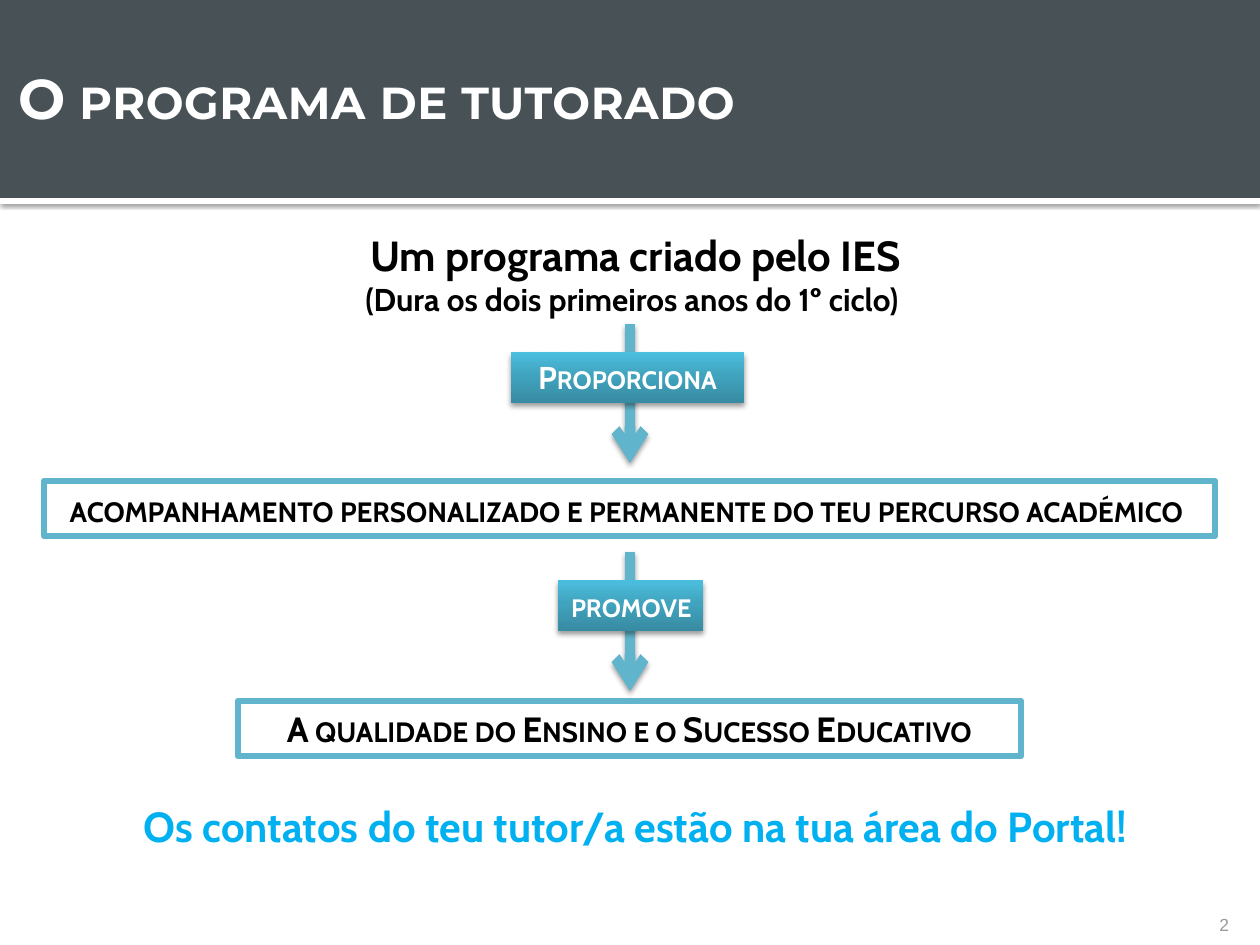
from lxml import etree
from pptx import Presentation
from pptx.dml.color import RGBColor
from pptx.enum.shapes import MSO_CONNECTOR, MSO_SHAPE
from pptx.enum.text import MSO_ANCHOR, PP_ALIGN
from pptx.oxml.ns import qn
from pptx.util import Emu, Pt

RECTANGLE = MSO_SHAPE.RECTANGLE
STRAIGHT = MSO_CONNECTOR.STRAIGHT
TOP, MIDDLE, BOTTOM = MSO_ANCHOR.TOP, MSO_ANCHOR.MIDDLE, MSO_ANCHOR.BOTTOM
LEFT, CENTER, RIGHT = PP_ALIGN.LEFT, PP_ALIGN.CENTER, PP_ALIGN.RIGHT

EMU_PER_PX = 914400 / 126
WIDTH, HEIGHT = 1260, 945

WHITE, BLACK = "FFFFFF", "000000"
SLATE, TEAL, SKY, GRAY = "485156", "60B5CC", "00B0F0", "9B9A98"
LABEL_GRADIENT = [(0, "378BA2"), (55, "41A4BF"), (100, "4BBFDE")]

# opacity in percent, blur and distance in points
BAND_SHADOW = (60, 2.5, 0.8)
SOFT_SHADOW = (38, 3.1, 2)

BODY_INSETS = (13, 6, 13, 6)
TITLE_INSETS = (13, 6, 6, 6)
NO_INSETS = (0, 0, 0, 0)


def px(length):
    return Emu(round(length * EMU_PER_PX))


def color(value):
    return RGBColor.from_string(value)


def add_element(parent, tag, **attributes):
    element = etree.SubElement(parent, qn(tag))
    for name, value in attributes.items():
        element.set(name, str(value))
    return element


def add_color(parent, value):
    return add_element(parent, "a:srgbClr", val=value)


class SlideBuilder:
    def __init__(self, slide, font="Cabin"):
        self.slide = slide
        self.font = font

    def set_shadow(self, properties, shadow):
        """Give the shape properties an effect list, empty without a shadow."""
        effects = properties.find(qn("a:effectLst"))
        if effects is None:
            effects = add_element(properties, "a:effectLst")
        if shadow:
            opacity, blur, distance = shadow
            outer = add_element(effects, "a:outerShdw", blurRad=Pt(blur),
                                dist=Pt(distance), dir=90 * 60000, rotWithShape=0)
            add_element(add_color(outer, BLACK), "a:alpha", val=opacity * 1000)

    def set_gradient(self, shape, stops):
        """Fill the shape with colour stops that run from bottom to top."""
        shape.fill.gradient()
        shape.fill.gradient_angle = 90
        stop_list = next(shape._element.spPr.iter(qn("a:gsLst")))
        for stop in list(stop_list):
            stop_list.remove(stop)
        for position, value in stops:
            add_color(add_element(stop_list, "a:gs", pos=position * 1000), value)

    def fill_text(self, shape, lines, text_color=BLACK, font=None, bold=True,
                  small_caps=False, spacing=None, align=CENTER, anchor=TOP,
                  insets=BODY_INSETS, wrap=True):
        """Put (text, size) lines into the shape, one paragraph each."""
        frame = shape.text_frame
        sides = ("margin_left", "margin_top", "margin_right", "margin_bottom")
        settings = {"word_wrap": wrap, "vertical_anchor": anchor}
        settings.update(zip(sides, map(px, insets)))
        for name, value in settings.items():
            setattr(frame, name, value)
        for index, (text, size) in enumerate(lines):
            paragraph = frame.add_paragraph() if index else frame.paragraphs[0]
            paragraph.alignment = align
            run = paragraph.add_run()
            run.text = text
            style = {"name": font or self.font, "size": Pt(size), "bold": bold}
            for name, value in style.items():
                setattr(run.font, name, value)
            run.font.color.rgb = color(text_color)
            run_properties = run._r.get_or_add_rPr()
            if small_caps:
                run_properties.set("cap", "small")
            if spacing:
                run_properties.set("spc", str(spacing))

    def text(self, box, lines, **style):
        shape = self.slide.shapes.add_textbox(*map(px, box))
        self.fill_text(shape, lines, **style)

    def rectangle(self, box, fill=WHITE, line=None, shadow=None):
        """Draw a rectangle; a list of stops as fill makes a gradient."""
        shape = self.slide.shapes.add_shape(RECTANGLE, *map(px, box))
        if isinstance(fill, list):
            self.set_gradient(shape, fill)
        else:
            shape.fill.solid()
            shape.fill.fore_color.rgb = color(fill)
        if line:
            shape.line.color.rgb = color(line)
            shape.line.width = Pt(3.78)
        else:
            shape.line.fill.background()
        shape.shadow.inherit = False
        self.set_shadow(shape._element.spPr, shadow)
        return shape

    def statement(self, box, text):
        shape = self.rectangle(box, line=TEAL)
        self.fill_text(shape, [(text, 20)], small_caps=True)

    def label(self, box, text, **style):
        shape = self.rectangle(box, fill=LABEL_GRADIENT, shadow=SOFT_SHADOW)
        self.fill_text(shape, [(text, 18)], text_color=WHITE, small_caps=True,
                       **style)

    def down_arrow(self, x, top, length):
        connector = self.slide.shapes.add_connector(
            STRAIGHT, *map(px, (x, top, x, top + length)))
        connector.line.color.rgb = color(TEAL)
        connector.line.width = Pt(6)
        add_element(connector.line._get_or_add_ln(), "a:tailEnd", type="arrow")
        self.set_shadow(connector._element.spPr, SOFT_SHADOW)


def main():
    presentation = Presentation()
    presentation.slide_width = px(WIDTH)
    presentation.slide_height = px(HEIGHT)
    builder = SlideBuilder(
        presentation.slides.add_slide(presentation.slide_layouts[6]))

    builder.rectangle((0, 198, WIDTH, 6), shadow=BAND_SHADOW)
    builder.rectangle((0, 0, WIDTH, 198), fill=SLATE)
    builder.text((5, 37, 953, 120), [("O programa de tutorado", 32)],
                 text_color=WHITE, font="Montserrat", small_caps=True, spacing=40,
                 align=LEFT, anchor=MIDDLE, insets=TITLE_INSETS)

    builder.text((25, 795, 1221, 63),
                 [("Os contatos do teu tutor/a estão na tua área do Portal!", 24)],
                 text_color=SKY)
    builder.text((1124, 885, 105, 50), [("2", 10)], text_color=GRAY, font="Arial",
                 bold=False, align=RIGHT, anchor=BOTTOM, insets=NO_INSETS)
    builder.text((25, 224, 1221, 140),
                 [("Um programa criado pelo IES", 24),
                  ("(Dura os dois primeiros anos do 1º ciclo) ", 18)])

    for arrow_top in (324, 552):
        builder.down_arrow(WIDTH // 2, arrow_top, 139)
    builder.label((511, 352, 233, 51), "Proporciona")
    builder.statement(
        (44, 481, 1171, 55),
        "acompanhamento personalizado e permanente do teu percurso académico ")
    builder.label((558, 580, 145, 51), "promove", align=LEFT, wrap=False)
    builder.statement((238, 701, 783, 55),
                      "A qualidade do Ensino e o Sucesso Educativo")

    presentation.save("out.pptx")


if __name__ == "__main__":
    main()
